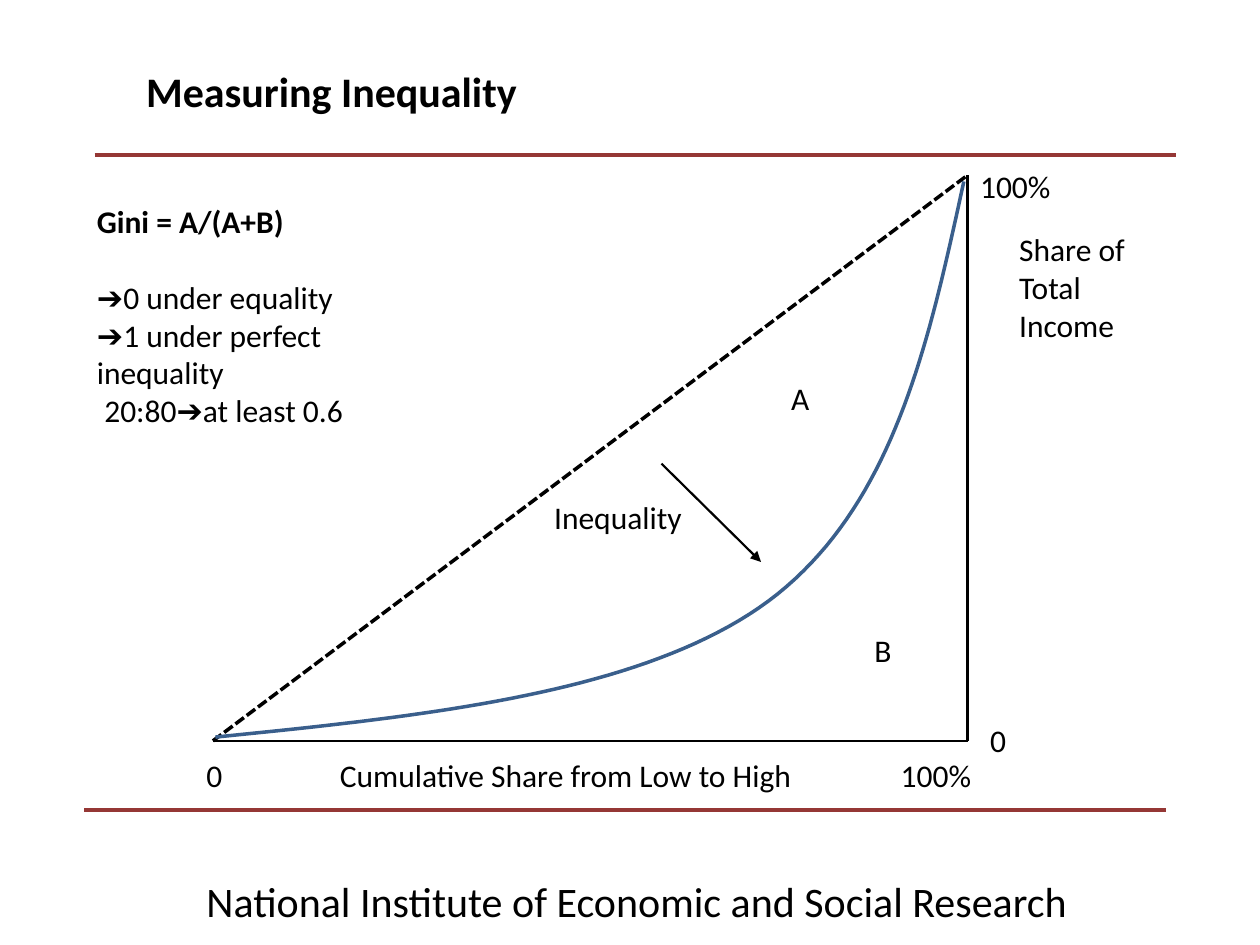
from dataclasses import dataclass

from pptx import Presentation
from pptx.dml.color import RGBColor
from pptx.enum.dml import MSO_LINE
from pptx.enum.shapes import MSO_CONNECTOR
from pptx.enum.text import MSO_ANCHOR, MSO_AUTO_SIZE, PP_ALIGN
from pptx.oxml.ns import qn
from pptx.slide import Slide
from pptx.text.text import TextFrame
from pptx.util import Inches, Pt

STRAIGHT = MSO_CONNECTOR.STRAIGHT
DASHED = MSO_LINE.SQUARE_DOT
LEFT = PP_ALIGN.LEFT
TOP = MSO_ANCHOR.TOP
NO_AUTOFIT = MSO_AUTO_SIZE.NONE

BLACK = RGBColor(0x00, 0x00, 0x00)
RULE_RED = RGBColor(0x95, 0x37, 0x35)
CURVE_BLUE = RGBColor(0x3A, 0x5F, 0x8C)
FONT = "Calibri"

# Corners of the Lorenz diagram
ORIGIN = (1.69, 5.88)
CORNER = (7.68, 5.88)
SUMMIT = (7.68, 1.39)

# Cubic Bezier segments of the Lorenz curve, sharing their end points
CURVE_SEGMENTS = [
    [(1.71, 5.85), (3.41, 5.68), (5.11, 5.5), (6.1, 4.77)],
    [(6.1, 4.77), (7.09, 4.03), (7.37, 2.73), (7.65, 1.44)],
]
CURVE_STEPS = 40

Point = tuple[float, float]


@dataclass
class Line:
    start: Point
    end: Point
    width: float
    color: RGBColor = BLACK
    dashed: bool = False
    arrow: bool = False


@dataclass
class Label:
    text: str
    left: float
    top: float
    width: float
    height: float = 0.4
    size: int = 18


LINES = [
    # Rules above and below the content
    Line((0.75, 1.23), (9.33, 1.23), 2.25, RULE_RED),
    Line((0.67, 6.43), (9.25, 6.43), 2.25, RULE_RED),
    # Axes, equality line and inequality arrow
    Line(SUMMIT, CORNER, 1.75),
    Line(ORIGIN, CORNER, 1.5),
    Line(ORIGIN, SUMMIT, 2, dashed=True),
    Line((5.25, 3.68), (6.04, 4.46), 1.25, arrow=True),
]

LABELS = [
    Label("National Institute of Economic and Social Research", 1.54, 6.9, 7.95, size=24),
    # Axis labels
    Label("0", 1.54, 5.95, 0.47),
    Label("100%", 7.05, 5.95, 0.79),
    Label("0", 7.76, 5.67, 0.47),
    Label("100%", 7.68, 1.28, 0.79),
    Label("Cumulative Share from Low to High", 2.6, 5.95, 4.57),
    Label("Share of Total Income", 7.99, 1.78, 1.42, 1.01),
    # Areas of the diagram
    Label("Inequality", 4.3, 3.9, 1.34),
    Label("A", 6.18, 2.96, 0.71),
    Label("B", 6.84, 4.96, 0.71),
]

GINI_NOTE = Label(
    "Gini = A/(A+B)\n➔0 under equality\n➔1 under perfect inequality\n20:80➔at least 0.6",
    0.67, 1.55, 2.68, 1.92,
)


def add_line(slide: Slide, line: Line) -> None:
    points = [Inches(value) for value in (*line.start, *line.end)]
    connector = slide.shapes.add_connector(STRAIGHT, *points)
    connector.line.color.rgb = line.color
    connector.line.width = Pt(line.width)
    if line.dashed:
        connector.line.dash_style = DASHED
    properties = connector._element.spPr
    if line.arrow:
        outline = connector.line._get_or_add_ln()
        tail = outline.makeelement(qn("a:tailEnd"), {"type": "triangle"})
        outline.append(tail)
    properties.append(properties.makeelement(qn("a:effectLst"), {}))


def set_text(text_frame: TextFrame, text: str, size: int, bold: bool = False) -> None:
    text_frame.text = text
    text_frame.word_wrap = True
    text_frame.auto_size = NO_AUTOFIT
    text_frame.vertical_anchor = TOP
    for paragraph in text_frame.paragraphs:
        paragraph.alignment = LEFT
        for run in paragraph.runs:
            run.font.name = FONT
            run.font.size = Pt(size)
            run.font.bold = bold
            run.font.color.rgb = BLACK


def add_label(slide: Slide, label: Label) -> TextFrame:
    box = slide.shapes.add_textbox(
        Inches(label.left), Inches(label.top), Inches(label.width), Inches(label.height)
    )
    set_text(box.text_frame, label.text, label.size)
    return box.text_frame


def bezier_point(segment: list[Point], t: float) -> Point:
    weights = ((1 - t) ** 3, 3 * t * (1 - t) ** 2, 3 * t**2 * (1 - t), t**3)
    x, y = (
        sum(weight * point[axis] for weight, point in zip(weights, segment))
        for axis in (0, 1)
    )
    return x, y


def add_lorenz_curve(slide: Slide) -> None:
    points = [
        bezier_point(segment, step / CURVE_STEPS)
        for segment in CURVE_SEGMENTS
        for step in range(1, CURVE_STEPS + 1)
    ]
    start_x, start_y = CURVE_SEGMENTS[0][0]
    builder = slide.shapes.build_freeform(Inches(start_x), Inches(start_y))
    builder.add_line_segments([(Inches(x), Inches(y)) for x, y in points], close=False)
    curve = builder.convert_to_shape()
    curve.shadow.inherit = False
    curve.fill.background()
    curve.line.color.rgb = CURVE_BLUE
    curve.line.width = Pt(2)


def add_title(slide: Slide) -> None:
    title = slide.shapes.title
    title.left, title.top = Inches(1.06), Inches(0.47)
    title.width, title.height = Inches(8.03), Inches(0.5)
    set_text(title.text_frame, "Measuring Inequality", 24, bold=True)


def add_gini_note(slide: Slide) -> None:
    heading, equality, _, example = add_label(slide, GINI_NOTE).paragraphs
    heading.runs[0].font.bold = True
    equality.space_before = Pt(22)
    example._p.get_or_add_pPr().set("marL", str(Inches(0.06)))


def main() -> None:
    presentation = Presentation()
    presentation.slide_width = Inches(10)
    presentation.slide_height = Inches(7.5)
    slide = presentation.slides.add_slide(presentation.slide_layouts[5])

    add_title(slide)
    for line in LINES:
        add_line(slide, line)
    add_lorenz_curve(slide)
    for label in LABELS:
        add_label(slide, label)
    add_gini_note(slide)

    presentation.save("out.pptx")


if __name__ == "__main__":
    main()
